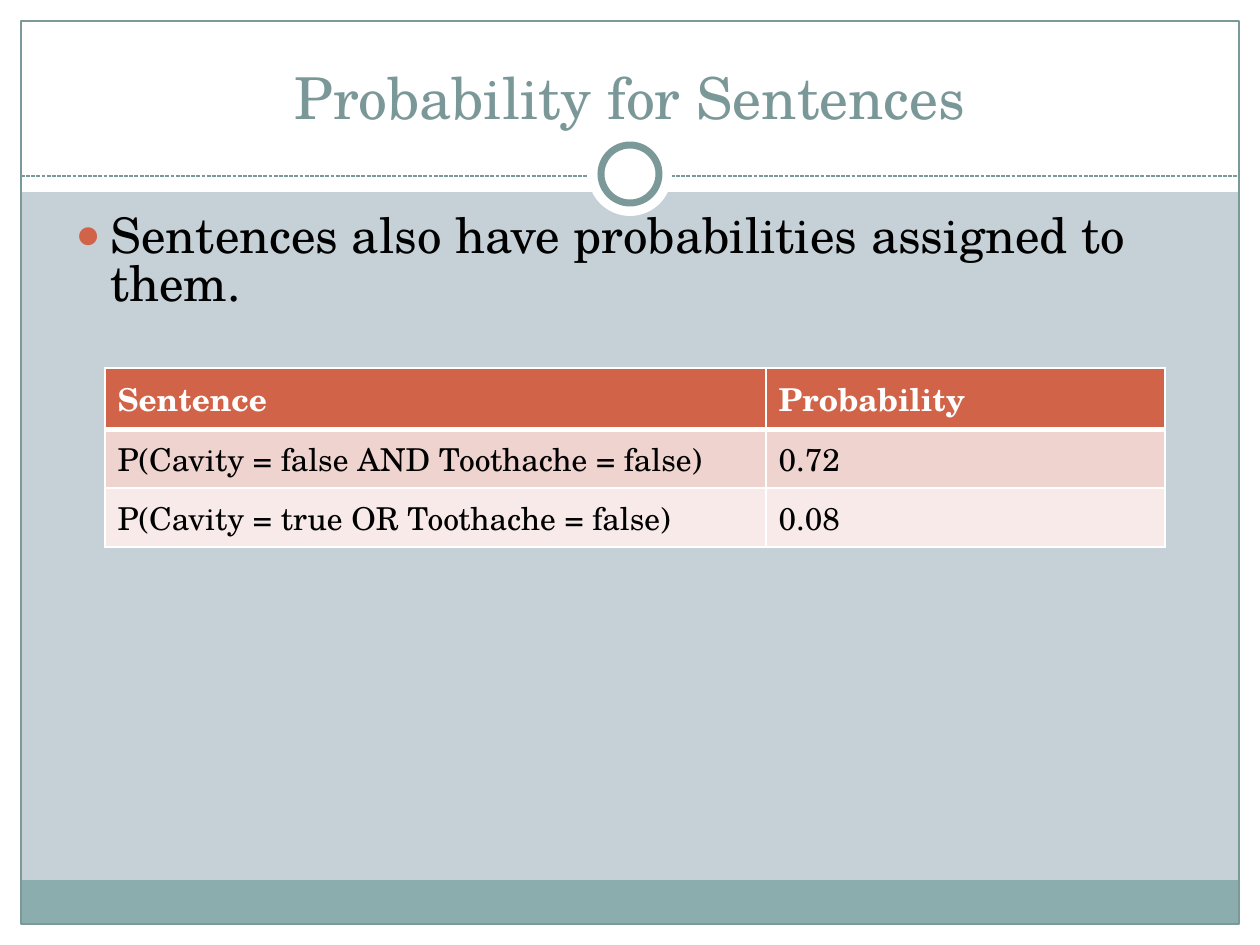
from dataclasses import dataclass
from typing import Optional

from lxml import etree
from pptx import Presentation
from pptx import util as u
from pptx.dml.color import RGBColor
from pptx.enum import dml, shapes, text
from pptx.oxml import ns

SCALE = u.Inches(1) / 126


@dataclass(frozen=True)
class Theme:
    font: str = "TeX Gyre Schola"
    back: str = "C5D1D7"
    white: str = "FFFFFF"
    black: str = "000000"
    band: str = "8CADAE"
    edge: str = "7C999A"
    title: str = "7B9899"
    accent: str = "D16349"
    tints: tuple = ("EED3CF", "F7EAE9")
    head_size: int = 33
    body_size: int = 28
    cell_size: int = 18


@dataclass(frozen=True)
class Box:
    left: int
    top: int
    width: int
    height: int
    fill: Optional[str] = None
    line: Optional[str] = None
    weight: float = 0.75
    kind: shapes.MSO_SHAPE = shapes.MSO_SHAPE.RECTANGLE


THEME = Theme()
WIDE, HIGH, EDGE, RULE = 1260, 945, 21, 176
RIGHT, FLOOR = WIDE - EDGE, HIGH - EDGE
OVAL = shapes.MSO_SHAPE.OVAL

PANELS = [
    Box(0, FLOOR, WIDE, EDGE, THEME.white),
    Box(0, 0, WIDE, 192, THEME.white),
    Box(0, 0, EDGE, HIGH, THEME.white),
    Box(RIGHT, 0, EDGE, HIGH, THEME.white),
    Box(EDGE, 880, RIGHT - EDGE, FLOOR - 880, THEME.band),
    Box(EDGE, EDGE, RIGHT - EDGE, FLOOR - EDGE, line=THEME.edge),
]
RINGS = [
    Box(588, 132, 84, 84, THEME.white, kind=OVAL),
    Box(601, 145, 58, 58, THEME.white, THEME.edge, 4, OVAL),
]
ROWS = [
    ("Sentence", "Probability"),
    ("P(Cavity = false AND Toothache = false)", "0.72"),
    ("P(Cavity = true OR Toothache = false)", "0.08"),
]


def px(count: int) -> int:
    return round(count * SCALE)


def tint(code: str) -> RGBColor:
    return RGBColor.from_string(code)


def add_node(parent, tag: str, **attrs: str):
    return etree.SubElement(parent, ns.qn(tag), attrs)


def draw_box(slide, box: Box) -> None:
    shape = slide.shapes.add_shape(
        box.kind, px(box.left), px(box.top), px(box.width), px(box.height))
    shape.shadow.inherit = False
    if box.fill:
        shape.fill.solid()
        shape.fill.fore_color.rgb = tint(box.fill)
    else:
        shape.fill.background()
    if box.line:
        shape.line.color.rgb = tint(box.line)
        shape.line.width = u.Pt(box.weight)
    else:
        shape.line.fill.background()


def draw_rule(slide) -> None:
    rule = slide.shapes.add_connector(
        shapes.MSO_CONNECTOR.STRAIGHT, px(EDGE), px(RULE), px(RIGHT), px(RULE))
    rule.line.color.rgb = tint(THEME.edge)
    rule.line.width = u.Pt(0.75)
    rule.line.dash_style = dml.MSO_LINE.SQUARE_DOT
    add_node(rule._element.spPr, "a:effectLst")


def style_text(para, size: int, color: str, bold: bool = False) -> None:
    for run in para.runs:
        run.font.name = THEME.font
        run.font.size = u.Pt(size)
        run.font.bold = bold
        run.font.color.rgb = tint(color)


def fill_holder(slide, holder, box: Box, words: str, size: int, color: str):
    holder.left, holder.top = px(box.left), px(box.top)
    holder.width, holder.height = px(box.width), px(box.height)
    frame = holder.text_frame
    frame.text = words
    frame.auto_size = text.MSO_AUTO_SIZE.NONE
    style_text(frame.paragraphs[0], size, color)
    slide.shapes._spTree.append(holder._element)
    return frame


def add_bullet(para) -> None:
    props = para._p.get_or_add_pPr()
    props.set("marL", str(px(35)))
    props.set("indent", str(px(-35)))
    color = add_node(props, "a:buClr")
    add_node(color, "a:srgbClr", val=THEME.accent)
    add_node(props, "a:buSzPct", val="85000")
    add_node(props, "a:buChar", char="●")


def draw_edge(cell, side: str, weight: float) -> None:
    line = add_node(cell._tc.get_or_add_tcPr(), f"a:{side}", w=str(u.Pt(weight)))
    fill = add_node(line, "a:solidFill")
    add_node(fill, "a:srgbClr", val=THEME.white)


def style_cell(cell, words: str, row: int) -> None:
    head = row == 0
    cell.text = words
    color = THEME.white if head else THEME.black
    style_text(cell.text_frame.paragraphs[0], THEME.cell_size, color, head)
    weights = {"lnL": 1, "lnR": 1, "lnT": 3 if row == 1 else 1, "lnB": 3 if head else 1}
    for side, weight in weights.items():
        draw_edge(cell, side, weight)
    cell.fill.solid()
    cell.fill.fore_color.rgb = tint(THEME.accent if head else THEME.tints[row - 1])


def draw_table(slide) -> None:
    widths, height = (661, 399), 51
    table = slide.shapes.add_table(
        len(ROWS), len(widths), px(105), px(368),
        px(sum(widths)), px(height * len(ROWS))).table
    for column, width in zip(table.columns, widths):
        column.width = px(width)
    for row, entries in enumerate(ROWS):
        for column, words in enumerate(entries):
            style_cell(table.cell(row, column), words, row)


def main() -> None:
    deck = Presentation()
    deck.slide_width, deck.slide_height = px(WIDE), px(HIGH)
    slide = deck.slides.add_slide(deck.slide_layouts[1])
    slide.background.fill.solid()
    slide.background.fill.fore_color.rgb = tint(THEME.back)
    for box in PANELS:
        draw_box(slide, box)
    draw_rule(slide)
    for box in RINGS:
        draw_box(slide, box)

    title, body = slide.placeholders
    frame = fill_holder(slide, title, Box(42, 32, 1176, 105),
                        "Probability for Sentences", THEME.head_size, THEME.title)
    frame.vertical_anchor = text.MSO_ANCHOR.BOTTOM
    frame.paragraphs[0].alignment = text.PP_ALIGN.CENTER

    frame = fill_holder(slide, body, Box(63, 210, 1134, 746),
                        "Sentences also have probabilities assigned to them.",
                        THEME.body_size, THEME.black)
    frame.paragraphs[0].line_spacing = 0.8
    add_bullet(frame.paragraphs[0])
    draw_table(slide)
    deck.save("out.pptx")


if __name__ == "__main__":
    main()
